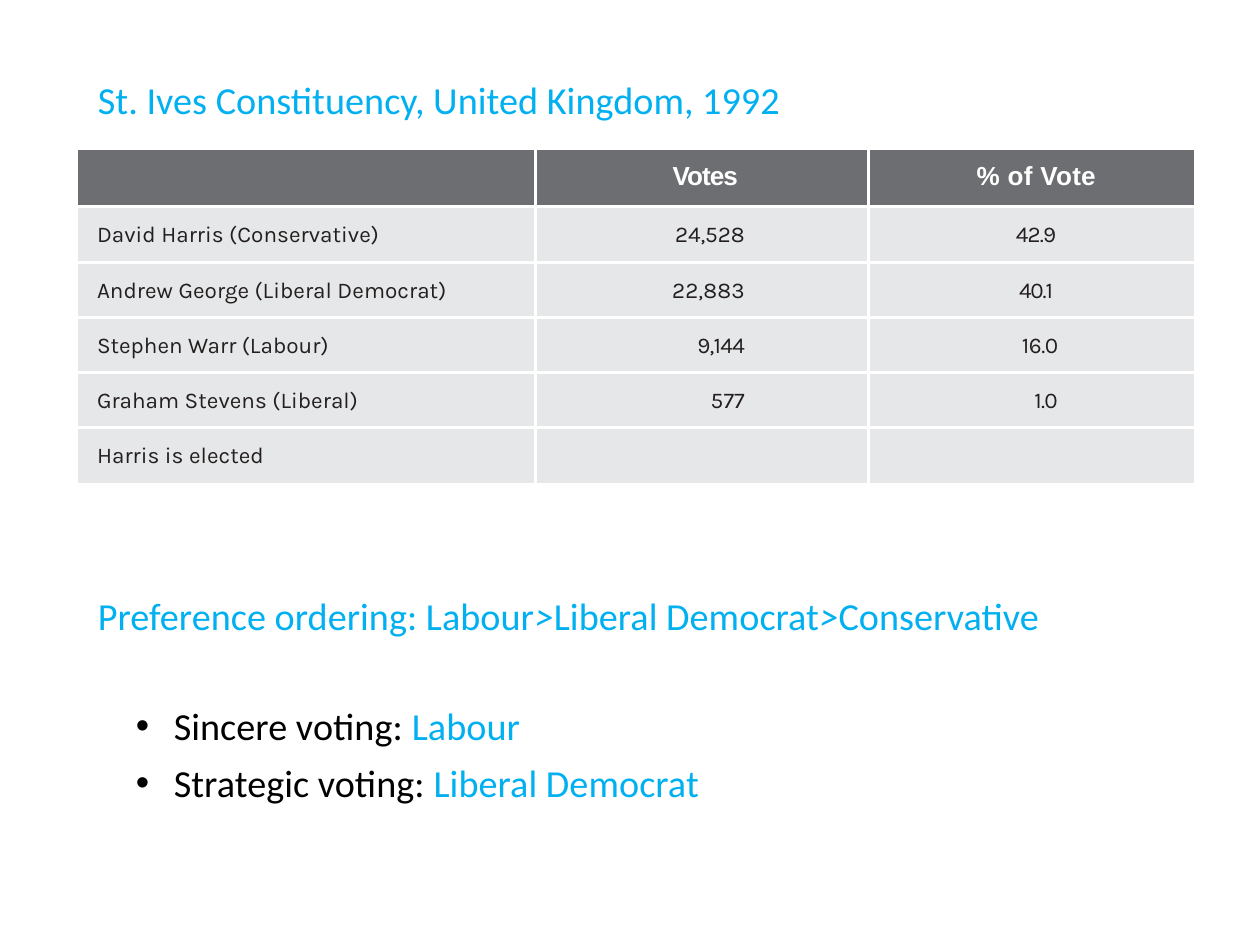
from dataclasses import dataclass

import pptx
import pptx.dml.color
import pptx.enum.text
import pptx.oxml.ns
import pptx.util
from lxml import etree

PX = 3658  # EMU in one px, at 250 px to the inch
SLIDE_WIDTH, SLIDE_HEIGHT = pptx.util.Pt(363), pptx.util.Pt(272.5)
ALIGN = pptx.enum.text.PP_ALIGN
BLUE, BLACK, WHITE = "00B0F0", "000000", "FFFFFF"
HEADER_FILL, BODY_FILL, BODY_TEXT = "6D6E71", "E6E7E8", "231F20"
COLUMN_WIDTHS = [458, 333, 325]
ROW_HEIGHTS = [57, 56, 55, 55, 55, 55]


@dataclass
class Cell:
    text: str = ""
    align: ALIGN = ALIGN.LEFT
    left: int = 0
    right: int = 0
    spacing: int = 0  # hundredths of a point


@dataclass
class Run:
    text: str
    color: str = BLUE
    italic: bool = False


@dataclass
class Line:
    runs: list[Run]
    space_before: float
    left: int
    indent: int = 0


def name(text: str) -> Cell:
    return Cell(text, left=19, spacing=3)


def votes(text: str, spacing: int = 0, right: int = 124) -> Cell:
    return Cell(text, ALIGN.RIGHT, right=right, spacing=spacing)


def share(text: str, left: int, spacing: int) -> Cell:
    return Cell(text, ALIGN.CENTER, left, spacing=spacing)


ROWS = [
    [Cell(), votes("Votes", -30, 131), Cell("% of Vote", left=108, spacing=5)],
    [name("David Harris (Conservative)"), votes("24,528"), share("42.9", 10, -20)],
    [name("Andrew George (Liberal Democrat)"), votes("22,883", 6), share("40.1", 10, -30)],
    [name("Stephen Warr (Labour)"), votes("9,144", -20), share("16.0", 18, -10)],
    [name("Graham Stevens (Liberal)"), votes("577", 6), share("1.0", 30, -20)],
    [name("Harris is elected"), Cell(), Cell()],
]
TITLE = [Line([Run("St. Ives Constituency, United Kingdom, 1992")], 0.9, 3)]
PREFERENCES = [
    Line([Run("Preference ordering: Labour"), Run(">", italic=True), Run("Liberal Democrat"),
          Run(">", italic=True), Run("Conservative")], 0.9, 6),
    Line([Run("Sincere voting: ", BLACK), Run("Labour")], 18.5, 82, -38),
    Line([Run("Strategic voting: ", BLACK), Run("Liberal Democrat")], 3.3, 82, -38),
]


def px(n: int) -> pptx.util.Emu:
    return pptx.util.Emu(n * PX)


def rgb(color: str) -> pptx.dml.color.RGBColor:
    return pptx.dml.color.RGBColor.from_string(color)


def add_xml(parent: etree._Element, tag: str, **attributes: str) -> etree._Element:
    return etree.SubElement(parent, pptx.oxml.ns.qn(tag), attributes)


def set_all(target: object, values: dict) -> None:
    for key, value in values.items():
        setattr(target, key, value)


def format_font(font, family: str, size: float, color: str, **values: bool) -> None:
    set_all(font, {"name": family, "size": pptx.util.Pt(size), **values})
    font.color.rgb = rgb(color)


def add_borders(cell, row: int, column: int) -> None:
    """Put white lines on the inner sides of a cell, ahead of its fill as the schema asks."""
    inner = {"a:lnL": column > 0, "a:lnR": column < len(COLUMN_WIDTHS) - 1,
             "a:lnT": row > 0, "a:lnB": row < len(ROWS) - 1}
    tcPr = cell._tc.get_or_add_tcPr()
    for i, (side, is_inner) in enumerate(inner.items()):
        ln = add_xml(tcPr, side, w="12700" if is_inner else "0")
        if is_inner:
            add_xml(add_xml(ln, "a:solidFill"), "a:srgbClr", val=WHITE)
        else:
            add_xml(ln, "a:noFill")
        tcPr.insert(i, ln)


def fill_cell(cell, content: Cell, is_header: bool) -> None:
    cell.fill.solid()
    cell.fill.fore_color.rgb = rgb(HEADER_FILL if is_header else BODY_FILL)
    set_all(cell, {"margin_left": px(content.left), "margin_right": px(content.right),
                   "margin_top": px(12 if is_header else 15), "margin_bottom": 0})
    p = cell.text_frame.paragraphs[0]
    if not content.text:
        add_xml(p._p, "a:endParaRPr", sz="650")
        return
    set_all(p, {"alignment": content.align, "space_before": pptx.util.Pt(3.2 if is_header else 4)})
    r = p.add_run()
    r.text = content.text
    if is_header:
        format_font(r.font, "Arial", 7.5, WHITE, bold=True)
    else:
        format_font(r.font, "Karla", 6.5, BODY_TEXT, bold=False)
    r._r.get_or_add_rPr().set("spc", str(content.spacing))


def add_results(s) -> None:
    frame = s.shapes.add_table(len(ROWS), len(COLUMN_WIDTHS), px(78), px(150),
                               px(sum(COLUMN_WIDTHS)), px(sum(ROW_HEIGHTS)))
    table = frame.table
    for column, width in zip(table.columns, COLUMN_WIDTHS):
        column.width = px(width)
    for i, (row, height) in enumerate(zip(table.rows, ROW_HEIGHTS)):
        row.height = px(height)
        for j, content in enumerate(ROWS[i]):
            fill_cell(row.cells[j], content, is_header=i == 0)
            add_borders(row.cells[j], i, j)


def write_lines(sp, lines: list[Line]) -> None:
    tf = sp.text_frame
    set_all(tf, {"margin_left": 0, "margin_right": 0, "margin_top": px(3), "margin_bottom": 0,
                 "word_wrap": True, "vertical_anchor": pptx.enum.text.MSO_ANCHOR.TOP,
                 "auto_size": pptx.enum.text.MSO_AUTO_SIZE.SHAPE_TO_FIT_TEXT})
    for i, line in enumerate(lines):
        p = tf.add_paragraph() if i else tf.paragraphs[0]
        set_all(p, {"alignment": ALIGN.LEFT, "space_before": pptx.util.Pt(line.space_before)})
        pPr = p._p.get_or_add_pPr()
        pPr.set("marL", str(px(line.left)))
        pPr.set("indent", str(px(line.indent)))
        if line.indent:
            add_xml(pPr, "a:buFont", typeface="Arial")
            add_xml(pPr, "a:buChar", char="•")
        for run in line.runs:
            r = p.add_run()
            r.text = run.text
            format_font(r.font, "Calibri", 11, run.color, italic=run.italic)


def main() -> None:
    prs = pptx.Presentation()
    set_all(prs, {"slide_width": SLIDE_WIDTH, "slide_height": SLIDE_HEIGHT})
    s = prs.slides.add_slide(prs.slide_layouts[5])
    title = s.shapes.title
    set_all(title, {"left": px(95), "top": px(73), "width": px(723), "height": px(50)})
    write_lines(title, TITLE)
    add_results(s)
    write_lines(s.shapes.add_textbox(px(92), px(589), px(993), px(220)), PREFERENCES)
    prs.save("out.pptx")


if __name__ == "__main__":
    main()
